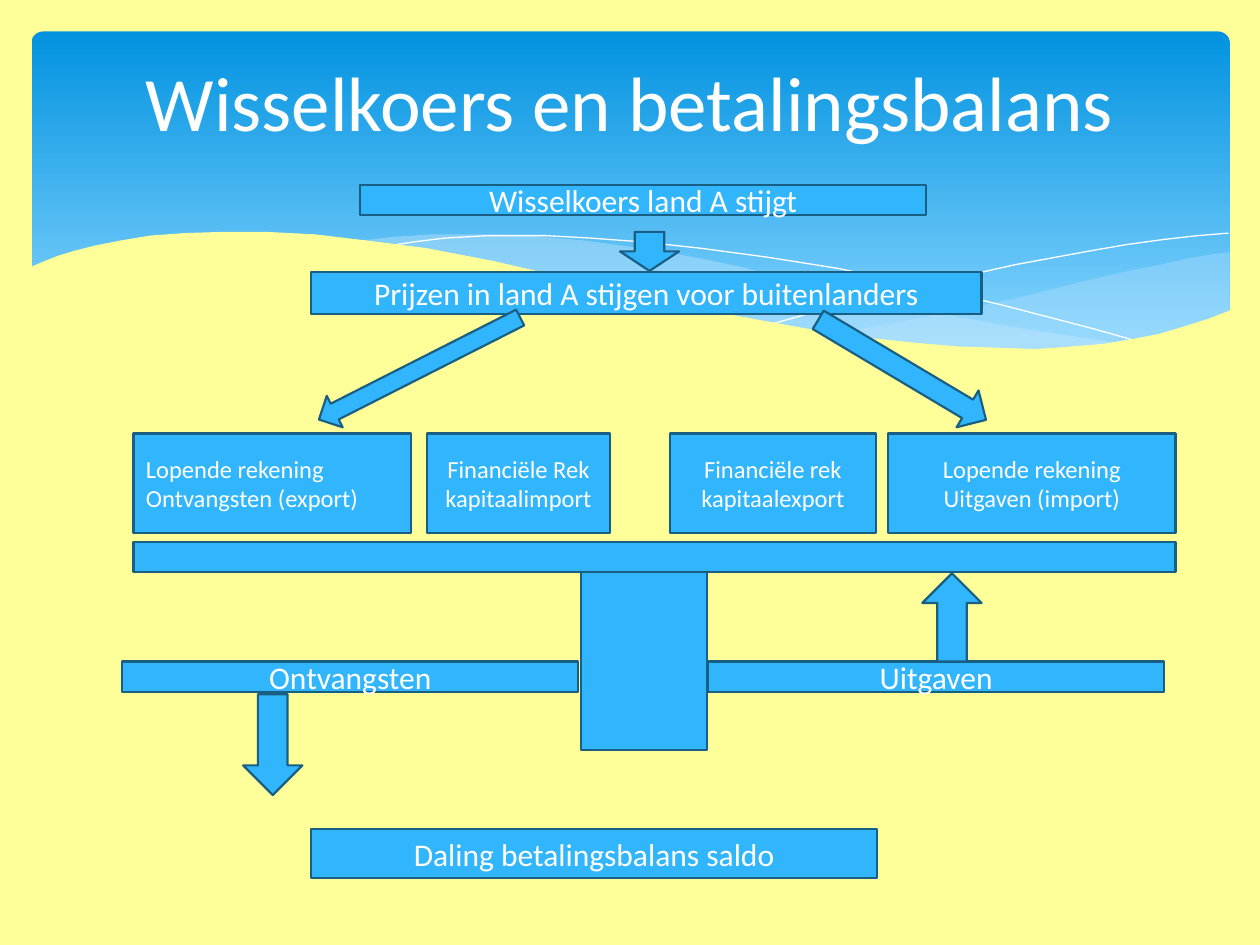
from lxml import etree
from pptx import Presentation, util as u
from pptx.dml.color import RGBColor
from pptx.enum import shapes, text
from pptx.oxml.ns import qn

# Grid: 1000 columns by 750 rows, each 0.01 inch
COLS, ROWS = 1000, 750
UNIT = u.Inches(0.01)
FONT = "Calibri"
COLORS = {"paper": "FFFF99", "sky_top": "0293E0", "sky_low": "83D3FE", "mist": "C6E7FC",
          "box": "31B6FD", "edge": "195F84", "white": "FFFFFF"}

TITLE = "Wisselkoers en betalingsbalans"
# row name: top, height
BANDS = {"cause": (147, 24), "prices": (216, 33), "accounts": (344, 79), "beam": (430, 24),
         "pillar": (454, 141), "flows": (525, 24), "result": (658, 39)}
# row, left, width, lines, size, alignment
BOXES = [
    ("beam", 106, 827, [], 18, "CENTER"),
    ("pillar", 461, 100, [], 18, "CENTER"),
    ("accounts", 106, 220, ["Lopende rekening", "Ontvangsten (export)"], 14, "LEFT"),
    ("accounts", 705, 228, ["Lopende rekening", "Uitgaven (import)"], 14, "CENTER"),
    ("accounts", 339, 145, ["Financiële Rek", "kapitaalimport"], 14, "CENTER"),
    ("accounts", 532, 163, ["Financiële rek", "kapitaalexport"], 14, "CENTER"),
    ("flows", 97, 362, ["Ontvangsten"], 18, "CENTER"),
    ("flows", 562, 362, ["Uitgaven"], 18, "CENTER"),
    ("cause", 286, 449, ["Wisselkoers land A stijgt"], 18, "CENTER"),
    ("prices", 247, 532, ["Prijzen in land A stijgen voor buitenlanders"], 18, "CENTER"),
    ("result", 247, 449, ["Daling betalingsbalans saldo"], 18, "CENTER"),
]
# left, top, width, height, rotation
ARROWS = [(492, 184, 47, 31, 0), (193, 551, 47, 80, 0), (732, 455, 47, 70, 180),
          (319, 203, 28, 179, 63.1), (699, 216, 34, 155, 300.8)]

WAVE_RIGHT = [(975, 200), (948, 204), (921, 210), (891, 216), (861, 223), (805, 237), (753, 248),
              (706, 257), (661, 265), (691, 269), (718, 272), (745, 275), (769, 277), (803, 278),
              (835, 277), (863, 275), (889, 272), (913, 267), (935, 262), (949, 257), (963, 252),
              (976, 247), (976, 200)]
WAVE_LEFT = [(893, 273), (866, 269), (807, 260), (741, 248), (668, 231), (613, 218), (584, 211),
             (555, 205), (527, 200), (501, 196), (464, 191), (420, 187), (380, 186), (344, 186),
             (313, 188), (286, 191), (323, 196), (362, 203), (404, 211), (449, 222), (530, 240),
             (584, 252), (618, 258), (650, 264), (680, 268), (709, 272), (736, 275), (761, 277),
             (785, 278), (818, 279), (848, 278), (876, 275), (893, 273)]
CURVE_DOWN = [(309, 195), (328, 192), (353, 189), (387, 187), (433, 187), (469, 189), (510, 192),
              (556, 197), (608, 204), (665, 213), (727, 226), (795, 242), (868, 261), (907, 272)]
CURVE_UP = [(613, 257), (652, 246), (695, 235), (748, 223), (806, 210), (866, 199), (895, 194),
            (924, 190), (951, 187), (975, 185)]
FOREGROUND = [(977, 246), (959, 253), (940, 259), (920, 265), (899, 269), (875, 273), (850, 275),
              (823, 277), (793, 276), (761, 275), (726, 272), (688, 268), (647, 262), (603, 254),
              (555, 245), (503, 233), (447, 220), (391, 207), (339, 197), (292, 191), (250, 186),
              (211, 184), (177, 184), (146, 185), (119, 187), (95, 191), (75, 195), (59, 199),
              (46, 203), (36, 207), (24, 212), (23, 213), (23, 329), (977, 329)]


def rgb(name):
    return RGBColor.from_string(COLORS[name])


def place(*lengths):
    return [round(n * UNIT) for n in lengths]


def add_preset(kind, *box):
    sp = s.shapes.add_shape(kind, *place(*box))
    sp.shadow.inherit = False
    return sp


def add_block(kind, *box):
    """A preset shape in the blue style of the diagram."""
    sp = add_preset(kind, *box)
    sp.fill.solid()
    sp.fill.fore_color.rgb = rgb("box")
    sp.line.color.rgb = rgb("edge")
    sp.line.width = u.Pt(1.25)
    return sp


def add_outline(points, fill=None, alpha=100):
    """A filled wave, or a white hairline when no fill is given."""
    fb = s.shapes.build_freeform(*points[0], scale=UNIT)
    fb.add_line_segments(points[1:], close=fill is not None)
    sp = fb.convert_to_shape()
    sp.shadow.inherit = False
    if fill is None:
        sp.fill.background()
        sp.line.color.rgb = rgb("white")
        sp.line.width = 0
        return
    sp.line.fill.background()
    sp.fill.solid()
    sp.fill.fore_color.rgb = rgb(fill)
    if alpha < 100:
        color = sp.fill._xPr.find(".//" + qn("a:srgbClr"))
        etree.SubElement(color, qn("a:alpha")).set("val", str(alpha * 1000))


def write(sp, lines, size, align="CENTER"):
    tf = sp.text_frame
    tf.word_wrap = True
    tf.vertical_anchor = text.MSO_ANCHOR.MIDDLE
    for i, line in enumerate(lines):
        p = tf.add_paragraph() if i else tf.paragraphs[0]
        p.alignment = text.PP_ALIGN[align]
        r = p.add_run()
        r.text = line
        r.font.size, r.font.name = u.Pt(size), FONT
        r.font.color.rgb = rgb("white")


prs = Presentation()
prs.slide_width, prs.slide_height = place(COLS, ROWS)
s = prs.slides.add_slide(prs.slide_layouts[6])
s.background.fill.solid()
s.background.fill.fore_color.rgb = rgb("paper")

sky = add_preset(shapes.MSO_SHAPE.ROUNDED_RECTANGLE, 25, 25, 951, 270)
sky.adjustments[0] = 0.034
sky.line.fill.background()
sky.fill.gradient()
sky.fill.gradient_angle = 270
for stop, (name, position) in zip(sky.fill.gradient_stops, [("sky_top", 0), ("sky_low", 0.9)]):
    stop.color.rgb, stop.position = rgb(name), position

add_outline(WAVE_RIGHT, "mist", 29)
add_outline(WAVE_LEFT, "mist", 40)
add_outline(CURVE_DOWN)
add_outline(CURVE_UP)
add_outline(FOREGROUND, "paper")

write(s.shapes.add_textbox(*place(50, 37, 900, 86)), [TITLE], 44)

for band, left, width, lines, size, align in BOXES:
    top, height = BANDS[band]
    write(add_block(shapes.MSO_SHAPE.RECTANGLE, left, top, width, height), lines, size, align)

for *box, rotation in ARROWS:
    add_block(shapes.MSO_SHAPE.DOWN_ARROW, *box).rotation = rotation

prs.save("out.pptx")
